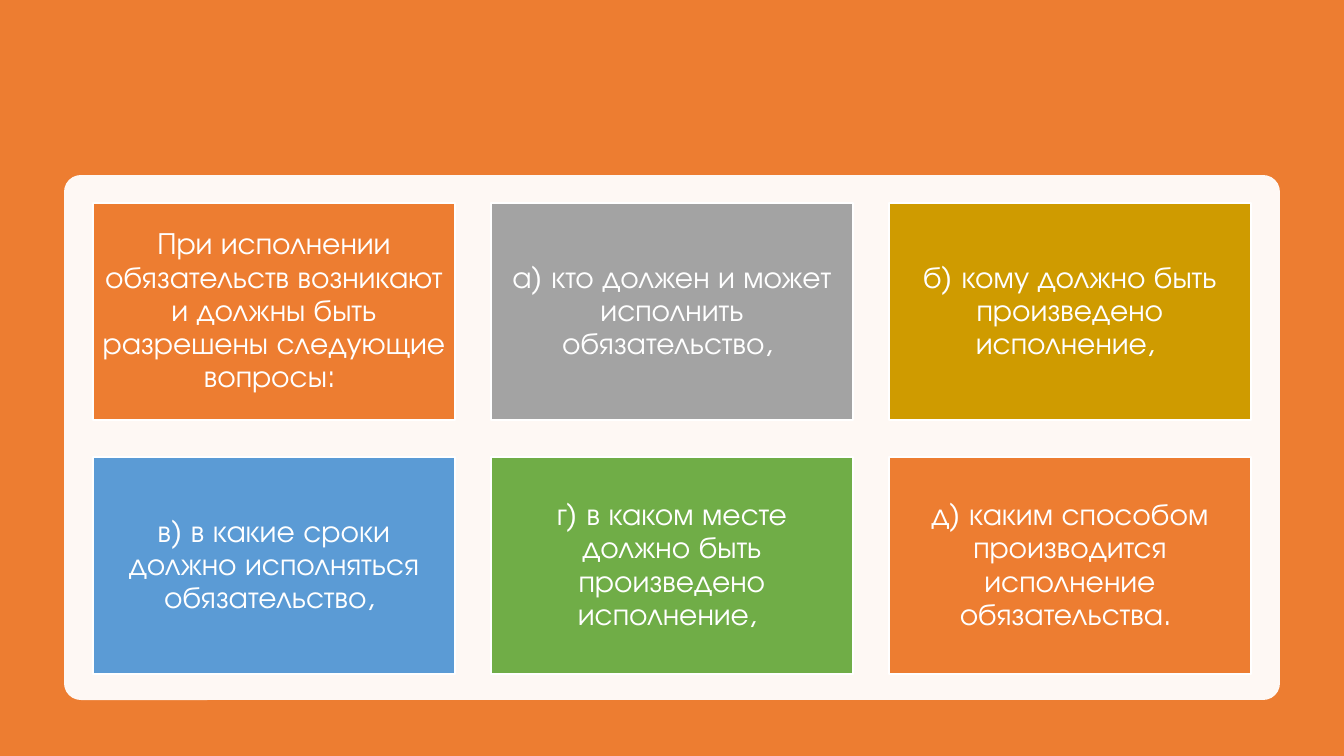
from lxml import etree
from pptx import Presentation
from pptx.dml.color import RGBColor
from pptx.enum.shapes import MSO_SHAPE
from pptx.enum.text import MSO_ANCHOR, PP_ALIGN
from pptx.oxml.ns import qn
from pptx.util import Pt

RECT = MSO_SHAPE.RECTANGLE
ROUND = MSO_SHAPE.ROUNDED_RECTANGLE
MIDDLE = MSO_ANCHOR.MIDDLE
CENTER = PP_ALIGN.CENTER

WHITE = RGBColor(0xFF, 0xFF, 0xFF)
ORANGE = RGBColor(0xED, 0x7D, 0x31)
GRAY = RGBColor(0xA3, 0xA3, 0xA3)
GOLD = RGBColor(0xCF, 0x9B, 0x00)
BLUE = RGBColor(0x5B, 0x9B, 0xD5)
GREEN = RGBColor(0x70, 0xAD, 0x47)

SCALE = 914400 / 100.8


def px(n):
    return round(n * SCALE)


def block(kind, x, y, w, h, color):
    shape = slide.shapes.add_shape(kind, px(x), px(y), px(w), px(h))
    shape.shadow.inherit = False
    shape.fill.solid()
    shape.fill.fore_color.rgb = color
    shape.line.fill.background()
    return shape


deck = Presentation()
deck.slide_width, deck.slide_height = px(1344), px(756)
slide = deck.slides.add_slide(deck.slide_layouts[6])

block(RECT, 0, 0, 1344, 756, ORANGE)
panel = block(ROUND, 64, 175, 1216, 525, WHITE)
panel.adjustments[0] = 0.032
tint = panel.fill._xPr.find(".//" + qn("a:srgbClr"))
etree.SubElement(tint, qn("a:alpha"), val="95000")

cards = [
    ("При исполнении обязательств возникают и должны быть разрешены следующие вопросы: ", ORANGE),
    ("а) кто должен и может исполнить обязательство, ", GRAY),
    ("б) кому должно быть произведено исполнение, ", GOLD),
    ("в) в какие сроки должно исполняться обязательство, ", BLUE),
    ("г) в каком месте должно быть произведено исполнение, ", GREEN),
    ("д) каким способом производится исполнение обязательства. ", ORANGE),
]
body = {"word_wrap": True, "vertical_anchor": MIDDLE}
body.update({f"margin_{side}": px(9) for side in ("left", "top", "right", "bottom")})
para = {"alignment": CENTER, "line_spacing": 0.9}
type_face = {"name": "TeX Gyre Adventor", "size": Pt(22)}

for i, (text, color) in enumerate(cards):
    row, col = divmod(i, 3)
    card = block(RECT, 93 + 398 * col, 203 + 254 * row, 362, 217, color)
    card.line.color.rgb = WHITE
    card.line.width = Pt(1)
    frame = card.text_frame
    line = frame.paragraphs[0]
    run = line.add_run()
    run.text = text
    run.font.color.rgb = WHITE
    for part, look in ((frame, body), (line, para), (run.font, type_face)):
        for key, value in look.items():
            setattr(part, key, value)

deck.save("out.pptx")
